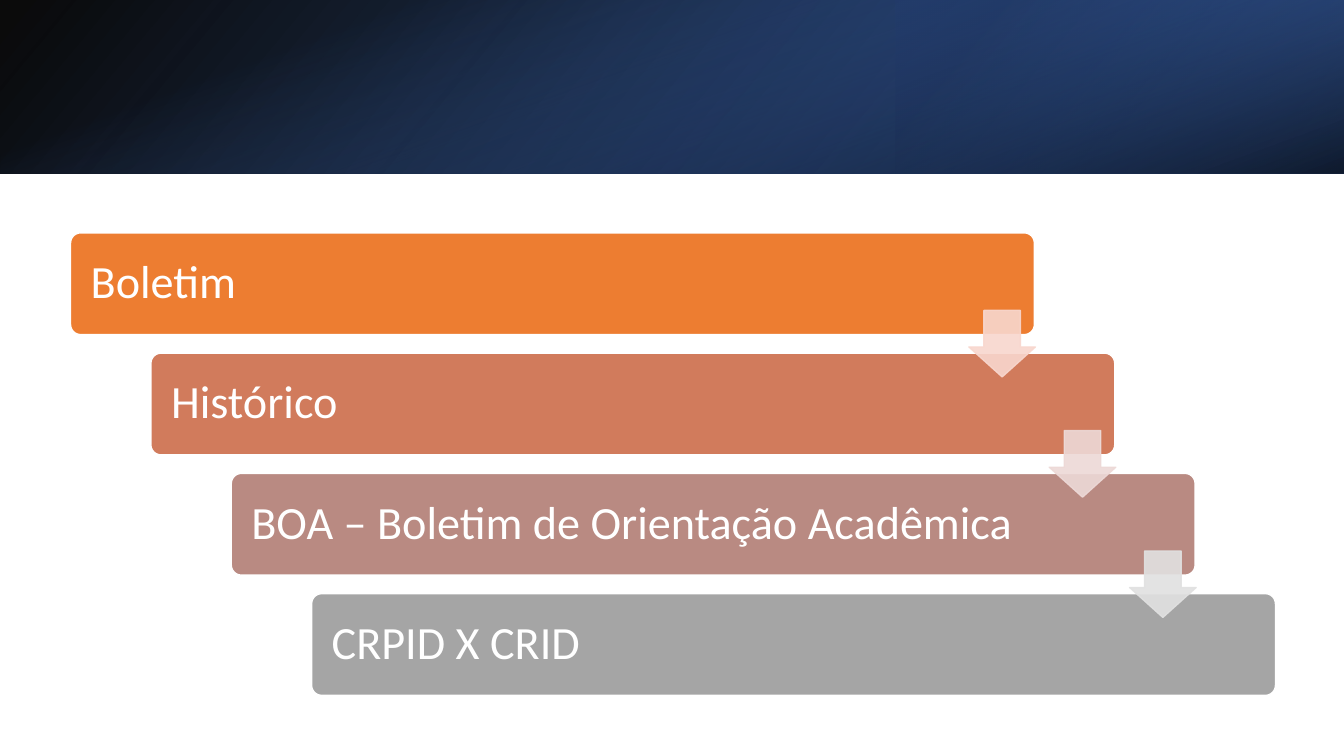
from dataclasses import dataclass

from lxml.etree import SubElement
from pptx import Presentation
from pptx.dml.color import RGBColor
from pptx.enum.shapes import MSO_SHAPE
from pptx.enum.text import MSO_ANCHOR, PP_ALIGN
from pptx.oxml.ns import qn
from pptx.util import Inches, Pt

W, H = 13.33, 7.5
BAND_H = 1.72
LEFT, TOP = 0.7, 2.31
COL, ROW = 0.797, 1.193
BAR_W, BAR_H = 9.56, 1.01
ARROW_DX, ARROW_DY, ARROW_SIZE = 8.91, 0.77, 0.66
FRAME = {"word_wrap": True, "vertical_anchor": MSO_ANCHOR.MIDDLE, "margin_left": Inches(0.17),
         "margin_right": Inches(0.17), "margin_top": Inches(0.14), "margin_bottom": Inches(0.14)}
PARAGRAPH = {"alignment": PP_ALIGN.LEFT, "line_spacing": 0.9}
FONT = {"name": "Calibri", "size": Pt(33)}


@dataclass
class Stop:
    """One gradient stop, with position and opacity in percent."""
    pos: int
    color: str
    alpha: int


@dataclass
class Band:
    """One gradient layer of the header."""
    box: tuple[float, float, float, float]
    angle: int
    stops: tuple[Stop, Stop]
    rotation: int = 0
    flip: bool = False


@dataclass
class Step:
    """One bar of the staircase and the colour of the arrow leaving it."""
    text: str
    color: str
    arrow: str = ""


BANDS = [
    Band((0, 0, W, BAND_H), 140, (Stop(0, "000000", 96), Stop(100, "2F5597", 100)), flip=True),
    Band((W * 2 / 3, 0, W / 3, BAND_H), 320,
         (Stop(19, "203864", 68), Stop(100, "4472C4", 79)), 180, True),
    Band(((W - BAND_H) / 2, (BAND_H - W) / 2, BAND_H, W), 340,
         (Stop(23, "4472C4", 0), Stop(99, "000000", 74)), 90),
]
STEPS = [
    Step("Boletim", "ED7D31", "F8D7CE"),
    Step("Histórico", "D17B5C", "EDD9D7"),
    Step("BOA – Boletim de Orientação Acadêmica", "B98A82", "E1E1E1"),
    Step("CRPID X CRID", "A5A5A5"),
]


def rgb(color: str) -> RGBColor:
    """Turn a hex string into a colour."""
    return RGBColor.from_string(color)


def apply(target, values: dict) -> None:
    """Set every attribute named in the format values."""
    for name, value in values.items():
        setattr(target, name, value)


def add_shape(s, kind: MSO_SHAPE, box: tuple, adjustments: tuple = ()):
    """Add a shadowless preset shape at a box given in inches."""
    sp = s.shapes.add_shape(kind, *(Inches(v) for v in box))
    sp.shadow.inherit = False
    for i, value in enumerate(adjustments):
        sp.adjustments[i] = value
    return sp


def set_alpha(sp, alphas: list[int]) -> None:
    """Give the shape's colours their opacities, in document order."""
    for clr, alpha in zip(sp.element.spPr.iter(qn("a:srgbClr")), alphas):
        SubElement(clr, qn("a:alpha")).set("val", str(alpha * 1000))


def paint(sp, fill: str, line: str) -> None:
    """Fill and outline a shape with solid colours."""
    sp.fill.solid()
    sp.fill.fore_color.rgb = rgb(fill)
    sp.line.color.rgb = rgb(line)
    sp.line.width = Pt(1)


def draw_band(s, band: Band) -> None:
    """Draw one gradient layer of the header."""
    sp = add_shape(s, MSO_SHAPE.RECTANGLE, band.box)
    sp.rotation = band.rotation
    if band.flip:
        sp.element.spPr.xfrm.set("flipH", "1")
    sp.line.fill.background()
    sp.fill.gradient()
    sp.fill.gradient_angle = 360 - band.angle
    for stop, value in zip(sp.fill.gradient_stops, band.stops):
        stop.position = value.pos / 100
        stop.color.rgb = rgb(value.color)
    set_alpha(sp, [stop.alpha for stop in band.stops])


def draw_bar(s, i: int, step: Step) -> None:
    """Draw one labelled bar of the staircase."""
    box = (LEFT + i * COL, TOP + i * ROW, BAR_W, BAR_H)
    sp = add_shape(s, MSO_SHAPE.ROUNDED_RECTANGLE, box, (0.1,))
    paint(sp, step.color, "FFFFFF")
    tf = sp.text_frame
    apply(tf, FRAME)
    p = tf.paragraphs[0]
    apply(p, PARAGRAPH)
    r = p.add_run()
    r.text = step.text
    apply(r.font, FONT)
    r.font.color.rgb = rgb("FFFFFF")


def draw_arrow(s, i: int, step: Step) -> None:
    """Draw the translucent arrow from one bar to the next."""
    box = (LEFT + ARROW_DX + i * COL, TOP + ARROW_DY + i * ROW, ARROW_SIZE, ARROW_SIZE)
    sp = add_shape(s, MSO_SHAPE.DOWN_ARROW, box, (0.55, 0.45))
    paint(sp, step.arrow, step.arrow)
    set_alpha(sp, [90, 90])


def main() -> None:
    """Build and save the slide."""
    prs = Presentation()
    prs.slide_width, prs.slide_height = Inches(W), Inches(H)
    s = prs.slides.add_slide(prs.slide_layouts[6])
    for band in BANDS:
        draw_band(s, band)
    for i, step in enumerate(STEPS):
        draw_bar(s, i, step)
    for i, step in enumerate(STEPS[:-1]):
        draw_arrow(s, i, step)
    prs.save("out.pptx")


if __name__ == "__main__":
    main()
